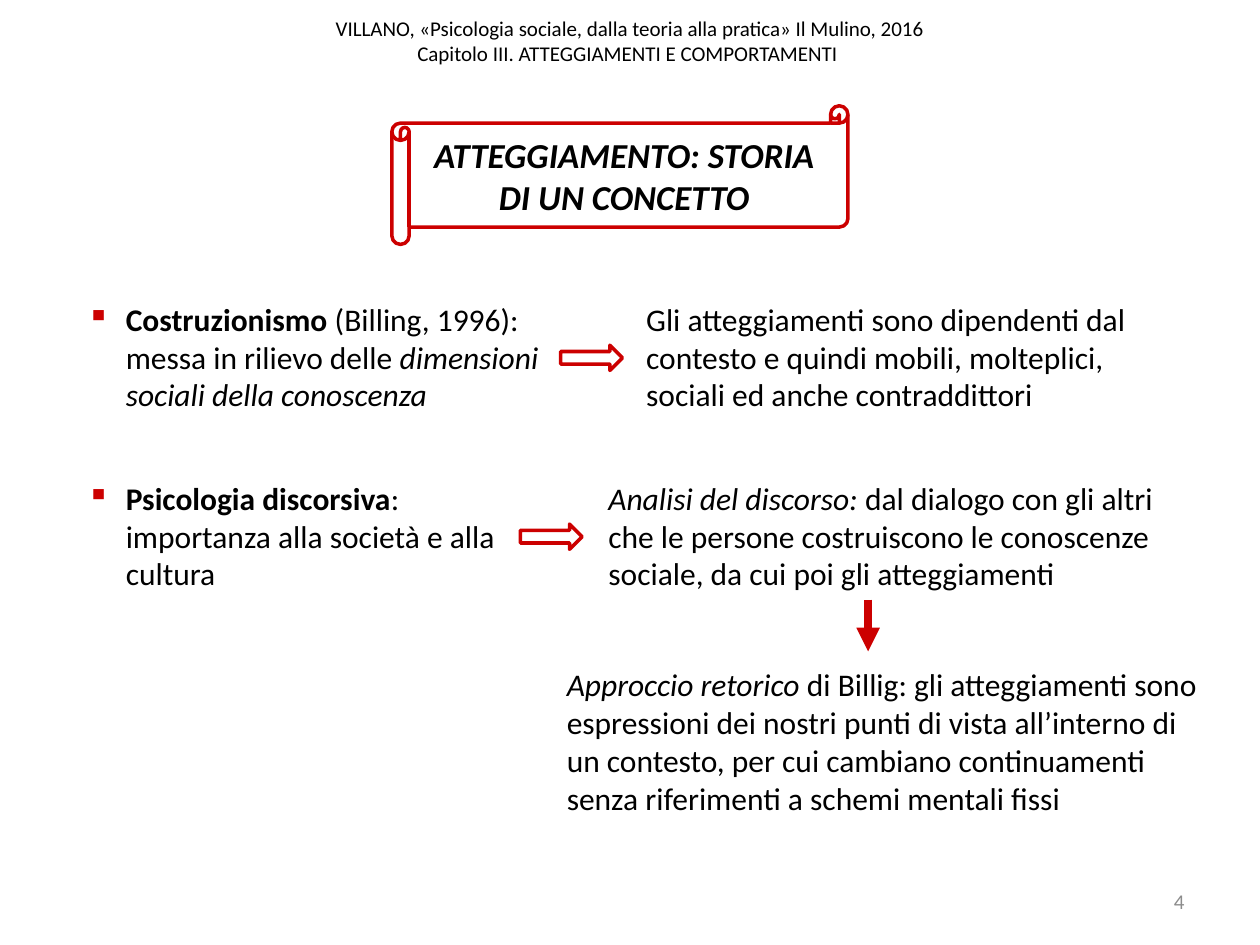
"""Build the slide on the history of the concept of attitude."""
from lxml import etree
from pptx import Presentation
from pptx.dml.color import RGBColor
from pptx.enum import shapes, text
from pptx.oxml import ns
from pptx.util import Inches, Pt

THEME = {
    "font": "Calibri",
    "ink": RGBColor.from_string("000000"),
    "accent": RGBColor.from_string("CC0000"),
    "muted": RGBColor.from_string("8C8C8C"),
    "small": Pt(12), "body": Pt(18), "banner": Pt(20),
    "outline": Pt(2), "heavy": Pt(4.5),
}

HEADER = ("VILLANO, «Psicologia sociale, dalla teoria alla pratica» Il Mulino, 2016\v"
          "Capitolo III. ATTEGGIAMENTI E COMPORTAMENTI ")
BANNER = "ATTEGGIAMENTO: STORIA DI UN CONCETTO"
PAGE_NUMBER = "4"

ROWS = [
    {"top": 2.33, "arrow_left": 4.45,
     "theory": (0.59, 4.25, [("Costruzionismo ", "b"),
                             ("(Billing, 1996): messa in rilievo delle ", ""),
                             ("dimensioni sociali della conoscenza", "i")]),
     "outcome": (5.03, 4.39, [("Gli atteggiamenti sono dipendenti dal contesto e quindi mobili, "
                               "molteplici, sociali ed anche contraddittori", "")])},
    {"top": 3.75, "arrow_left": 4.13,
     "theory": (0.59, 3.78, [("Psicologia discorsiva", "b"),
                             (": importanza alla società e alla cultura", "")]),
     "outcome": (4.73, 4.58, [("Analisi del discorso: ", "i"),
                              ("dal dialogo con gli altri che le persone costruiscono le "
                               "conoscenze sociale, da cui poi gli atteggiamenti", "")])},
]
RHETORIC = [("Approccio retorico ", "i"),
            ("di Billig: gli atteggiamenti sono espressioni dei nostri punti di vista "
             "all’interno di un contesto, per cui cambiano continuamenti senza riferimenti "
             "a schemi mentali fissi", "")]
ROW_HEIGHT, ARROW_DROP = 1.01, 0.41


def inches(*lengths):
    return [Inches(length) for length in lengths]


def style_font(font, size, color=THEME["ink"], bold=False, italic=False):
    font.name, font.size, font.bold, font.italic = THEME["font"], size, bold, italic
    font.color.rgb = color


def fill_text(shape, runs, size, color=THEME["ink"], align=text.PP_ALIGN.LEFT,
              anchor=text.MSO_ANCHOR.TOP):
    frame = shape.text_frame
    frame.word_wrap = True
    frame.auto_size = text.MSO_AUTO_SIZE.NONE
    frame.vertical_anchor = anchor
    paragraph = frame.paragraphs[0]
    paragraph.alignment = align
    for content, style in runs:
        run = paragraph.add_run()
        run.text = content
        style_font(run.font, size, color, "b" in style, "i" in style)


def add_text(slide, box, runs, size=THEME["body"], **options):
    shape = slide.shapes.add_textbox(*inches(*box))
    fill_text(shape, runs, size, **options)
    return shape


def add_bullet(shape):
    properties = shape.text_frame.paragraphs[0]._p.get_or_add_pPr()
    properties.set("marL", str(Inches(0.31)))
    properties.set("indent", str(-Inches(0.31)))
    color = etree.SubElement(properties, ns.qn("a:buClr"))
    etree.SubElement(color, ns.qn("a:srgbClr"), val=str(THEME["accent"]))
    etree.SubElement(properties, ns.qn("a:buChar"), char="▪")


def add_outline(slide, kind, box):
    shape = slide.shapes.add_shape(kind, *inches(*box))
    shape.shadow.inherit = False
    shape.fill.background()
    shape.line.color.rgb = THEME["accent"]
    shape.line.width = THEME["outline"]
    return shape


def add_down_arrow(slide, x, top, bottom):
    arrow = slide.shapes.add_connector(shapes.MSO_CONNECTOR.STRAIGHT, *inches(x, top, x, bottom))
    arrow.line.color.rgb = THEME["accent"]
    arrow.line.width = THEME["heavy"]
    etree.SubElement(arrow.line._get_or_add_ln(), ns.qn("a:tailEnd"), type="triangle")
    etree.SubElement(arrow._element.spPr, ns.qn("a:effectLst"))


def add_header(slide):
    title = slide.shapes.title
    title.left, title.top, title.width, title.height = inches(0, -0.11, 10, 0.87)
    frame = title.text_frame
    frame.text = HEADER
    frame.word_wrap = True
    frame.auto_size = text.MSO_AUTO_SIZE.NONE
    frame.vertical_anchor = text.MSO_ANCHOR.MIDDLE
    frame.paragraphs[0].alignment = text.PP_ALIGN.CENTER
    for run in frame.paragraphs[0].runs:
        style_font(run.font, THEME["small"])


def main():
    presentation = Presentation()
    presentation.slide_width, presentation.slide_height = inches(10, 7.5)
    slide = presentation.slides.add_slide(presentation.slide_layouts[5])
    add_header(slide)
    add_text(slide, (7.17, 6.95, 2.33, 0.4), [(PAGE_NUMBER, "")], THEME["small"],
             color=THEME["muted"], align=text.PP_ALIGN.RIGHT, anchor=text.MSO_ANCHOR.MIDDLE)
    banner = add_outline(slide, shapes.MSO_SHAPE.HORIZONTAL_SCROLL, (3.11, 0.84, 3.62, 1.1))
    fill_text(banner, [(BANNER, "bi")], THEME["banner"],
              align=text.PP_ALIGN.CENTER, anchor=text.MSO_ANCHOR.MIDDLE)
    for row in ROWS:
        for part in ("theory", "outcome"):
            left, width, runs = row[part]
            shape = add_text(slide, (left, row["top"], width, ROW_HEIGHT), runs)
            if part == "theory":
                add_bullet(shape)
        add_outline(slide, shapes.MSO_SHAPE.RIGHT_ARROW,
                    (row["arrow_left"], row["top"] + ARROW_DROP, 0.49, 0.2))
    last_bottom = ROWS[-1]["top"] + ROW_HEIGHT
    add_down_arrow(slide, 6.89, last_bottom, last_bottom + ARROW_DROP)
    add_text(slide, (4.4, 5.23, 5.3, 1.31), RHETORIC)
    presentation.save("out.pptx")


if __name__ == "__main__":
    main()
